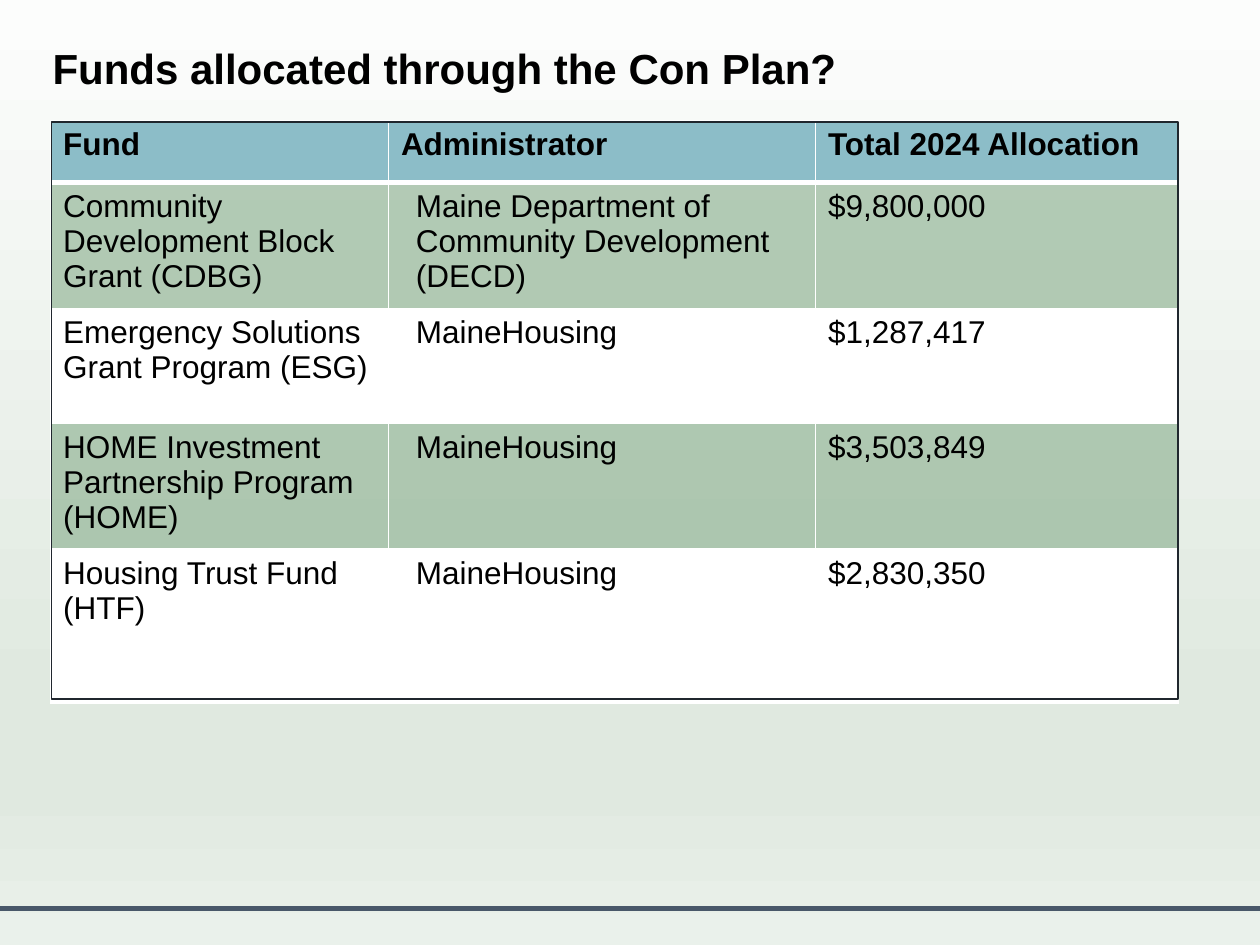
"""Build a slide listing the funds allocated through the Con Plan."""
from lxml import etree
from pptx import Presentation
from pptx import util as u
from pptx.dml.color import RGBColor
from pptx.enum import shapes
from pptx.oxml import ns

BLACK = RGBColor(0x00, 0x00, 0x00)
WHITE = RGBColor(0xFF, 0xFF, 0xFF)
HEADER_BLUE = RGBColor(0x8C, 0xBD, 0xC8)
BAND_GREEN = RGBColor(0x8A, 0xAF, 0x8E)
FOOTER_SLATE = RGBColor(0x49, 0x58, 0x69)
FRAME_DARK = RGBColor(0x20, 0x27, 0x2E)
MIST = RGBColor(0xFC, 0xFD, 0xFC)
SAGE = RGBColor(0xE0, 0xE9, 0xE0)
PALE_SAGE = RGBColor(0xEA, 0xF1, 0xEB)
BACKGROUND_STOPS = [(0, MIST), (74, SAGE), (83, SAGE), (100, PALE_SAGE)]

FUNDS = [
    ("Fund", "Administrator", "Total 2024 Allocation"),
    ("Community Development Block Grant (CDBG)",
     "Maine Department of Community Development (DECD)", "$9,800,000"),
    ("Emergency Solutions Grant Program (ESG)", "MaineHousing", "$1,287,417"),
    ("HOME Investment Partnership Program (HOME)", "MaineHousing", "$3,503,849"),
    ("Housing Trust Fund (HTF)", "MaineHousing", "$2,830,350"),
]
COLUMN_WIDTHS = [6.81, 8.61, 7.32]
ROW_HEIGHTS = [1.24, 2.46, 2.31, 2.54, 3.1]


def add_element(parent, tag, **attributes):
    return etree.SubElement(parent, ns.qn(tag), **attributes)


def set_background(slide):
    fill = slide.background.fill
    fill.gradient()
    fill.gradient_angle = 270
    stops = slide.background.fill._fill._gradFill.find(ns.qn("a:gsLst"))
    for stop in list(stops):
        stops.remove(stop)
    for percent, color in BACKGROUND_STOPS:
        stop = add_element(stops, "a:gs", pos=str(percent * 1000))
        add_element(stop, "a:srgbClr", val=str(color))


def set_font(paragraph, size, bold):
    font = paragraph.font
    font.name, font.size, font.bold = "Arial", u.Pt(size), bold
    font.color.rgb = BLACK


def add_footer_line(slide, width):
    top = u.Cm(18.31)
    line = slide.shapes.add_connector(shapes.MSO_CONNECTOR.STRAIGHT, 0, top, width, top)
    line.line.color.rgb = FOOTER_SLATE
    line.line.width = u.Pt(3)
    add_element(line._element.spPr, "a:effectLst")


def add_title(slide, title):
    box = slide.shapes.add_textbox(u.Cm(0.81), u.Cm(0.74), u.Cm(23.6), u.Cm(1.27))
    box.text_frame.word_wrap = True
    paragraph = box.text_frame.paragraphs[0]
    paragraph.text = title
    set_font(paragraph, 24, True)


def set_borders(cell, **widths):
    properties = cell._tc.get_or_add_tcPr()
    for index, side in enumerate("LRTB"):
        width = u.Pt(widths.get(side, 1))
        border = add_element(properties, f"a:ln{side}", w=str(width))
        fill = add_element(border, "a:solidFill")
        add_element(fill, "a:srgbClr", val=str(WHITE))
        properties.insert(index, border)


def fill_cell(cell, color, opacity=100):
    cell.fill.solid()
    cell.fill.fore_color.rgb = color
    if opacity < 100:
        color_element = next(cell._tc.tcPr.iter(ns.qn("a:srgbClr")))
        add_element(color_element, "a:alpha", val=str(opacity * 1000))


def style_cell(cell, row, column):
    paragraph = cell.text_frame.paragraphs[0]
    if row and column == 1:
        paragraph._p.get_or_add_pPr().set("marL", str(u.Cm(0.3)))
    set_font(paragraph, 18, row == 0)
    if row == 0:
        fill_cell(cell, HEADER_BLUE)
        set_borders(cell, B=3)
    else:
        fill_cell(cell, *((BAND_GREEN, 62) if row % 2 else (WHITE,)))
        set_borders(cell, T=3 if row == 1 else 1)


def add_fund_table(slide):
    table = slide.shapes.add_table(
        len(FUNDS), len(COLUMN_WIDTHS), u.Cm(1.02), u.Cm(2.44),
        u.Cm(sum(COLUMN_WIDTHS)), u.Cm(sum(ROW_HEIGHTS))).table
    for column, width in zip(table.columns, COLUMN_WIDTHS):
        column.width = u.Cm(width)
    for row, height in zip(table.rows, ROW_HEIGHTS):
        row.height = u.Cm(height)
    for row, values in enumerate(FUNDS):
        for column, value in enumerate(values):
            cell = table.cell(row, column)
            cell.text = value
            style_cell(cell, row, column)


def add_frame(slide):
    frame = slide.shapes.add_shape(
        shapes.MSO_SHAPE.RECTANGLE, u.Cm(1.04), u.Cm(2.46), u.Cm(22.71), u.Cm(11.63))
    frame.shadow.inherit = False
    frame.fill.background()
    frame.line.color.rgb = FRAME_DARK
    frame.line.width = u.Pt(1)


def main():
    presentation = Presentation()
    presentation.slide_width, presentation.slide_height = u.Cm(25.4), u.Cm(19.05)
    slide = presentation.slides.add_slide(presentation.slide_layouts[6])
    set_background(slide)
    add_footer_line(slide, presentation.slide_width)
    add_title(slide, "Funds allocated through the Con Plan?")
    add_fund_table(slide)
    add_frame(slide)
    presentation.save("out.pptx")


if __name__ == "__main__":
    main()
